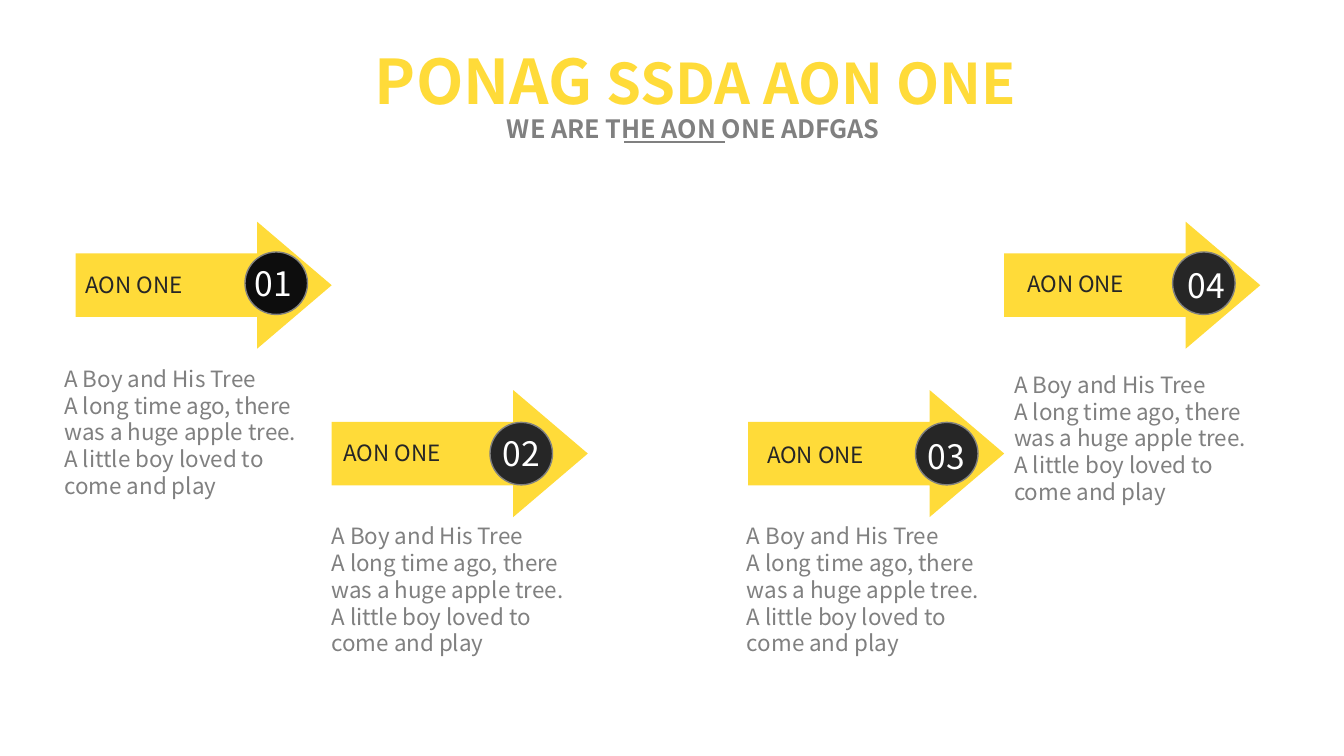
import dataclasses

import pptx
import pptx.dml.color
import pptx.enum.shapes
import pptx.enum.text
import pptx.oxml.ns
import pptx.util
from lxml import etree

EMU_PER_PX = 9144  # 100 px to the inch


@dataclasses.dataclass(frozen=True)
class Theme:
    font: str = "Noto Sans CJK SC"
    yellow: str = "FFDB39"
    gray: str = "808080"
    charcoal: str = "262626"
    black: str = "0D0D0D"
    white: str = "FFFFFF"
    title_large: int = 44
    title_size: int = 40
    subtitle_size: int = 18
    body_size: int = 16
    number_size: int = 24


def px(length):
    return pptx.util.Emu(length * EMU_PER_PX)


def rgb(color):
    return pptx.dml.color.RGBColor.from_string(color)


class Painter:
    def __init__(self, page, theme):
        self.page = page
        self.theme = theme

    def set_text(self, box, paragraphs, color, bold=False, wrap=False):
        """Fill a box with paragraphs, each a list of (text, size) spans."""
        frame = box.text_frame
        frame.word_wrap = wrap
        frame.auto_size = pptx.enum.text.MSO_AUTO_SIZE.SHAPE_TO_FIT_TEXT
        frame.vertical_anchor = pptx.enum.text.MSO_ANCHOR.TOP
        for index, spans in enumerate(paragraphs):
            para = frame.add_paragraph() if index else frame.paragraphs[0]
            para.alignment = pptx.enum.text.PP_ALIGN.LEFT
            for text, size in spans:
                span = para.add_run()
                span.text = text
                span.font.name = self.theme.font
                span.font.size = pptx.util.Pt(size)
                span.font.bold = bold
                span.font.color.rgb = rgb(color)

    def title(self, left, top, width, height, spans, color):
        box = self.page.shapes.title
        box.left, box.top = px(left), px(top)
        box.width, box.height = px(width), px(height)
        self.set_text(box, [spans], color, bold=True)

    def text(self, left, top, width, height, lines, size, color, **style):
        box = self.page.shapes.add_textbox(px(left), px(top), px(width), px(height))
        self.set_text(box, [[(line, size)] for line in lines], color, **style)

    def rule(self, left, top, width, color):
        line = self.page.shapes.add_connector(
            pptx.enum.shapes.MSO_CONNECTOR.STRAIGHT,
            px(left), px(top), px(left + width), px(top))
        line.line.color.rgb = rgb(color)
        line.line.width = pptx.util.Pt(1)
        properties = line._element.spPr
        etree.SubElement(properties, pptx.oxml.ns.qn("a:effectLst"))

    def shape(self, kind, left, top, width, height, fill, outline=None):
        shape = self.page.shapes.add_shape(
            kind, px(left), px(top), px(width), px(height))
        shape.shadow.inherit = False
        shape.fill.solid()
        shape.fill.fore_color.rgb = rgb(fill)
        if outline:
            shape.line.color.rgb = rgb(outline)
            shape.line.width = pptx.util.Pt(1)
        else:
            shape.line.fill.background()
        return shape

    def arrow(self, left, top):
        arrow = self.shape(pptx.enum.shapes.MSO_SHAPE.RIGHT_ARROW,
                           left, top, 254, 126, self.theme.yellow)
        arrow.adjustments[0] = 0.5
        arrow.adjustments[1] = 0.587

    def disc(self, left, top, fill):
        self.shape(pptx.enum.shapes.MSO_SHAPE.OVAL,
                   left, top, 62, 62, fill, self.theme.gray)


@dataclasses.dataclass(frozen=True)
class Step:
    """One arrow; every field but the fill is a (left, top) in px."""
    arrow: tuple
    label: tuple
    disc: tuple
    number: tuple
    story: tuple
    disc_fill: str


STORY = ["A Boy and His Tree",
         "A long time ago, there was a huge apple tree. "
         "A little boy loved to come and play"]


def main():
    theme = Theme()
    steps = [
        Step((75, 220), (75, 264), (243, 250), (243, 256), (54, 357), theme.black),
        Step((329, 387), (331, 431), (486, 419), (489, 425), (319, 513), theme.charcoal),
        Step((742, 387), (751, 433), (908, 419), (910, 428), (731, 513), theme.charcoal),
        Step((996, 220), (1009, 263), (1163, 250), (1168, 258), (996, 363), theme.charcoal),
    ]
    deck = pptx.Presentation()
    deck.slide_width, deck.slide_height = px(1333), px(750)
    title_only = deck.slide_layouts[5]
    painter = Painter(deck.slides.add_slide(title_only), theme)

    painter.title(348, 38, 743, 84,
                  [(" PONAG ", theme.title_large), ("SSDA AON ONE", theme.title_size)],
                  theme.yellow)
    painter.text(493, 108, 425, 40, ["WE ARE THE AON ONE ADFGAS"],
                 theme.subtitle_size, theme.gray, bold=True)
    painter.rule(619, 141, 100, theme.gray)

    for number, step in enumerate(steps, start=1):
        painter.arrow(*step.arrow)
        painter.text(*step.label, 134, 37, ["AON ONE"], theme.body_size, theme.charcoal)
        painter.disc(*step.disc, step.disc_fill)
        painter.text(*step.number, 60, 50, [f"{number:02}"],
                     theme.number_size, theme.white)
        painter.text(*step.story, 265, 145, STORY,
                     theme.body_size, theme.gray, wrap=True)

    deck.save("out.pptx")


if __name__ == "__main__":
    main()
